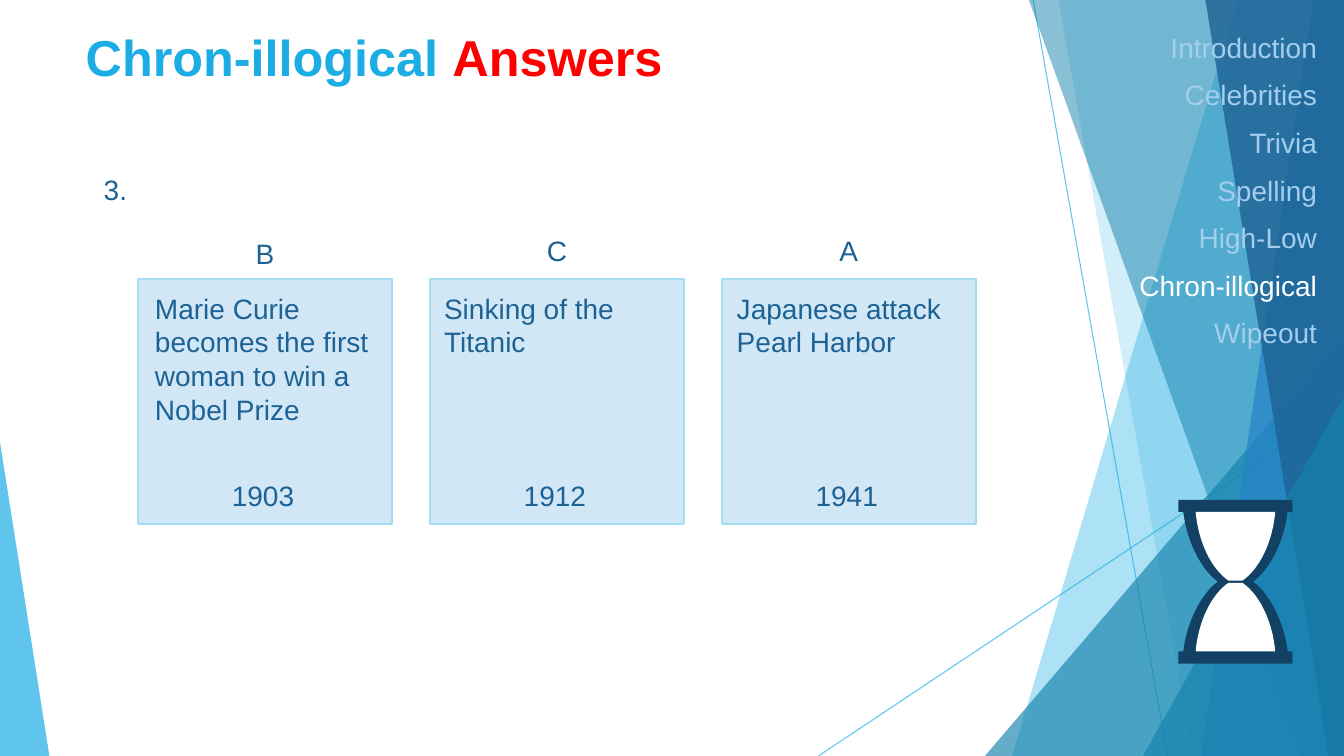
from lxml.etree import SubElement
from pptx import Presentation
from pptx.dml.color import RGBColor
from pptx.enum.shapes import MSO_CONNECTOR as Conn, MSO_SHAPE as Kind
from pptx.enum.text import MSO_ANCHOR as Anchor, MSO_AUTO_SIZE as Fit, PP_ALIGN as Align
from pptx.oxml.ns import qn
from pptx.util import Pt

SKY, TEAL, BLUE, DEEP, NAVY = "1CADE4", "1482AC", "2683C6", "1D6294", "134163"
PALE, EDGE, SOFT, WHITE, RED = "D1E7F6", "A4DEF4", "A3CEED", "FFFFFF", "FF0000"
WIDE, HIGH = 960, 540


def rgb(code):
    return RGBColor.from_string(code)


def curve(a, b, c, d, steps=16):
    """Points along a cubic curve from a to d."""
    points = []
    for i in range(steps + 1):
        t = i / steps
        u = 1 - t
        points.append(tuple(u**3 * p + 3 * u * u * t * q + 3 * u * t * t * r + t**3 * s
                            for p, q, r, s in zip(a, b, c, d)))
    return points


class Page:
    font = "Arial"
    size = 20

    def __init__(self, slide):
        self.slide = slide
        self.shapes = slide.shapes

    def fade(self, item, alpha):
        if alpha < 100:
            tint = item.element.spPr.find(".//" + qn("a:srgbClr"))
            SubElement(tint, qn("a:alpha"), val=str(alpha * 1000))

    def paint(self, shape, fill, alpha=100, edge=None):
        shape.shadow.inherit = False
        shape.fill.solid()
        shape.fill.fore_color.rgb = rgb(fill)
        self.fade(shape, alpha)
        if edge:
            shape.line.color.rgb = rgb(edge)
            shape.line.width = Pt(1.5)
        else:
            shape.line.fill.background()
        return shape

    def box(self, kind, x, y, w, h, fill, alpha=100, edge=None):
        shape = self.shapes.add_shape(kind, Pt(x), Pt(y), Pt(w), Pt(h))
        return self.paint(shape, fill, alpha, edge)

    def wedge(self, x, y, w, h, fill, alpha, tip):
        shape = self.box(Kind.ISOSCELES_TRIANGLE, x, y, w, h, fill, alpha)
        shape.adjustments[0] = tip

    def poly(self, points, fill, alpha=100):
        spots = [(Pt(x), Pt(y)) for x, y in points]
        build = self.shapes.build_freeform(*spots[0], scale=1.0)
        build.add_line_segments(spots[1:], close=True)
        self.paint(build.convert_to_shape(), fill, alpha)

    def line(self, x1, y1, x2, y2, color, alpha):
        link = self.shapes.add_connector(Conn.STRAIGHT, Pt(x1), Pt(y1), Pt(x2), Pt(y2))
        link.line.color.rgb = rgb(color)
        link.line.width = Pt(0.75)
        self.fade(link, alpha)
        SubElement(link.element.spPr, qn("a:effectLst"))

    def style(self, run, color, size=None, bold=False):
        font = run.font
        font.name, font.size, font.bold = self.font, Pt(size or self.size), bold
        font.color.rgb = rgb(color)

    def text(self, words, x, y, w, h, align=Align.LEFT):
        frame = self.shapes.add_textbox(Pt(x), Pt(y), Pt(w), Pt(h)).text_frame
        frame.word_wrap = True
        frame.text = words
        for para in frame.paragraphs:
            para.alignment = align
            for run in para.runs:
                self.style(run, DEEP)

    def place(self, holder, x, y, w, h):
        """Move a placeholder to the front and to its position."""
        holder.left, holder.top, holder.width, holder.height = Pt(x), Pt(y), Pt(w), Pt(h)
        holder.element.getparent().append(holder.element)
        frame = holder.text_frame
        frame.auto_size, frame.vertical_anchor = Fit.NONE, Anchor.TOP
        frame.word_wrap = True
        return frame

    def title(self, parts, x, y, w, h):
        para = self.place(self.shapes.title, x, y, w, h).paragraphs[0]
        para.alignment = Align.LEFT
        for words, color in parts:
            run = para.add_run()
            run.text = words
            self.style(run, color, 36, True)

    def menu(self, names, active, x, y, w, h):
        frame = self.place(self.slide.placeholders[1], x, y, w, h)
        frame.text = "\n".join(names)
        for para in frame.paragraphs:
            para.alignment = Align.RIGHT
            para.space_before = Pt(10)
            props = para._p.get_or_add_pPr()
            props.set("marL", "0")
            props.set("indent", "0")
            SubElement(props, qn("a:buNone"))
            self.style(para.runs[0], WHITE if para.text == active else SOFT)

    def glass(self, x, y):
        """Hourglass centred on x, y."""
        side = [(40.7, -58.5), (40.7, -49.8)]
        side += curve((37.2, -49.8), (35.6, -33), (26.3, -10), (12.6, 0))
        half = side + [(a, -b) for a, b in reversed(side)]
        rim = half + [(-a, -b) for a, b in half]
        self.poly([(x + a, y + b) for a, b in rim], NAVY)
        wall = curve((28.4, -49.8), (26.5, -28), (17, -9), (5, -0.8))
        bulb = wall + [(-a, b) for a, b in reversed(wall)]
        for sign in (1, -1):
            self.poly([(x + a, y + sign * b) for a, b in bulb], WHITE)


def main():
    deck = Presentation()
    deck.slide_width, deck.slide_height = Pt(WIDE), Pt(HIGH)
    page = Page(deck.slides.add_slide(deck.slide_layouts[1]))

    # Backdrop: lines, slanted bands reaching the right edge, wedges
    def band(top, low, fill, alpha):
        page.poly([(top, 0), (WIDE, 0), (WIDE, HIGH), (low, HIGH)], fill, alpha)

    page.line(738, 0, 834, HIGH, SKY, 70)
    page.line(WIDE, 290, 584.6, HIGH, SKY, 70)
    band(884, 723, SKY, 36)
    band(756, 852, SKY, 20)
    page.wedge(703.5, 240, 256.5, 300, TEAL, 66, 1)
    band(735, 929.5, TEAL, 50)
    band(938, 858, BLUE, 70)
    band(861, 949, DEEP, 80)
    page.wedge(816.5, 283, 143.5, 257, TEAL, 66, 1)
    page.wedge(0, 316, 35.3, 224, SKY, 70, 0)

    # Heading and question number
    page.title([("Chron-illogical ", SKY), ("Answers", RED)], 54, 15, 818.6, 90.7)
    page.text("3.", 67, 119.5, 40, 31.5)

    # Answer cards: letter, its top, event, its indent, year
    cards = [
        ("B", 165.6, "Marie Curie\nbecomes the first woman to win a Nobel Prize", 5, "1903"),
        ("C", 163.4, "Sinking of the Titanic", 3, "1912"),
        ("A", 163.4, "Japanese attack Pearl Harbor", 3.6, "1941"),
    ]
    wide, step = 181.5, 208.5
    for i, (letter, top, event, inset, year) in enumerate(cards):
        left = 98.6 + i * step
        page.box(Kind.RECTANGLE, left, 199.6, wide, 175, PALE, edge=EDGE)
        page.text(letter, left + wide / 2 - 15, top, 30, 31.5, Align.CENTER)
        page.text(event, left + inset, 204.5, 171.5, 104)
        page.text(year, left + wide / 2 - 31.5, 338.4, 60, 31.5, Align.CENTER)

    # Round menu and timer
    rounds = ["Introduction", "Celebrities", "Trivia", "Spelling",
              "High-Low", "Chron-illogical", "Wipeout"]
    page.menu(rounds, "Chron-illogical", 760, 18, 188, 325)
    page.glass(882.5, 415.5)

    deck.save("out.pptx")


if __name__ == "__main__":
    main()
